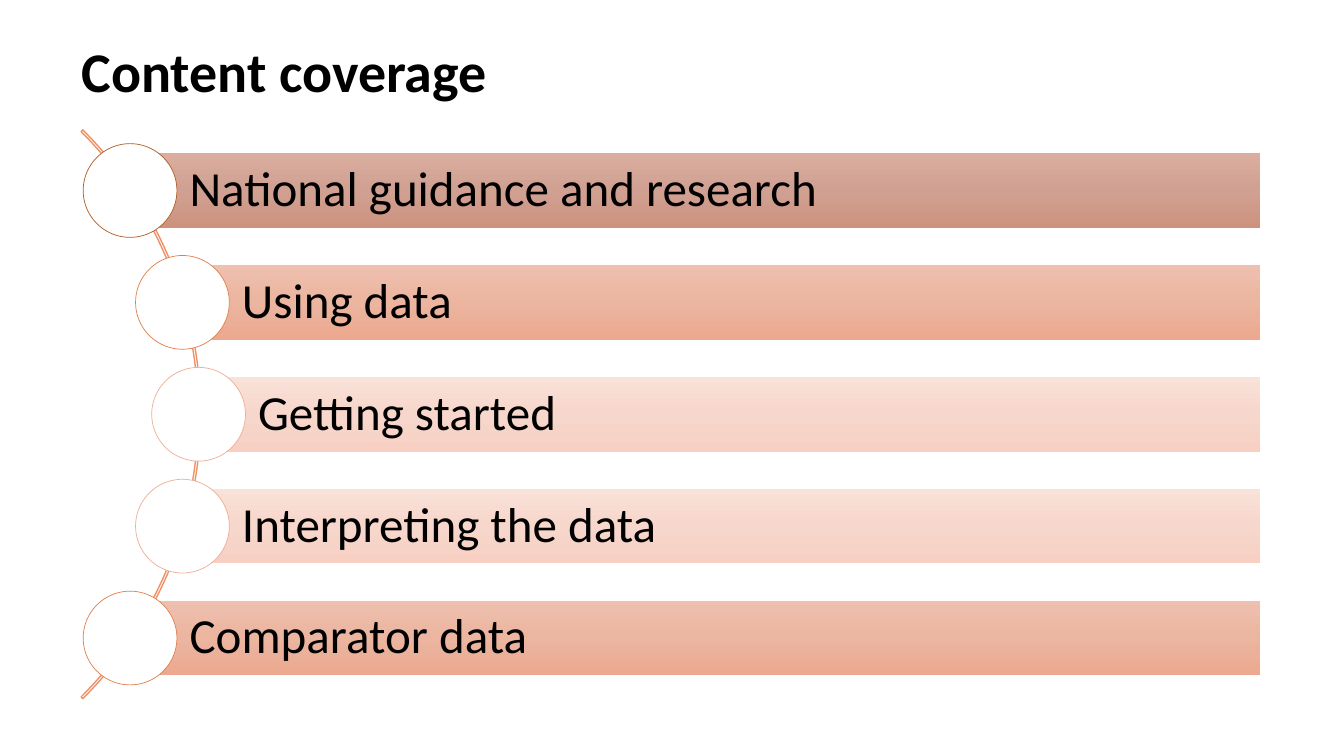
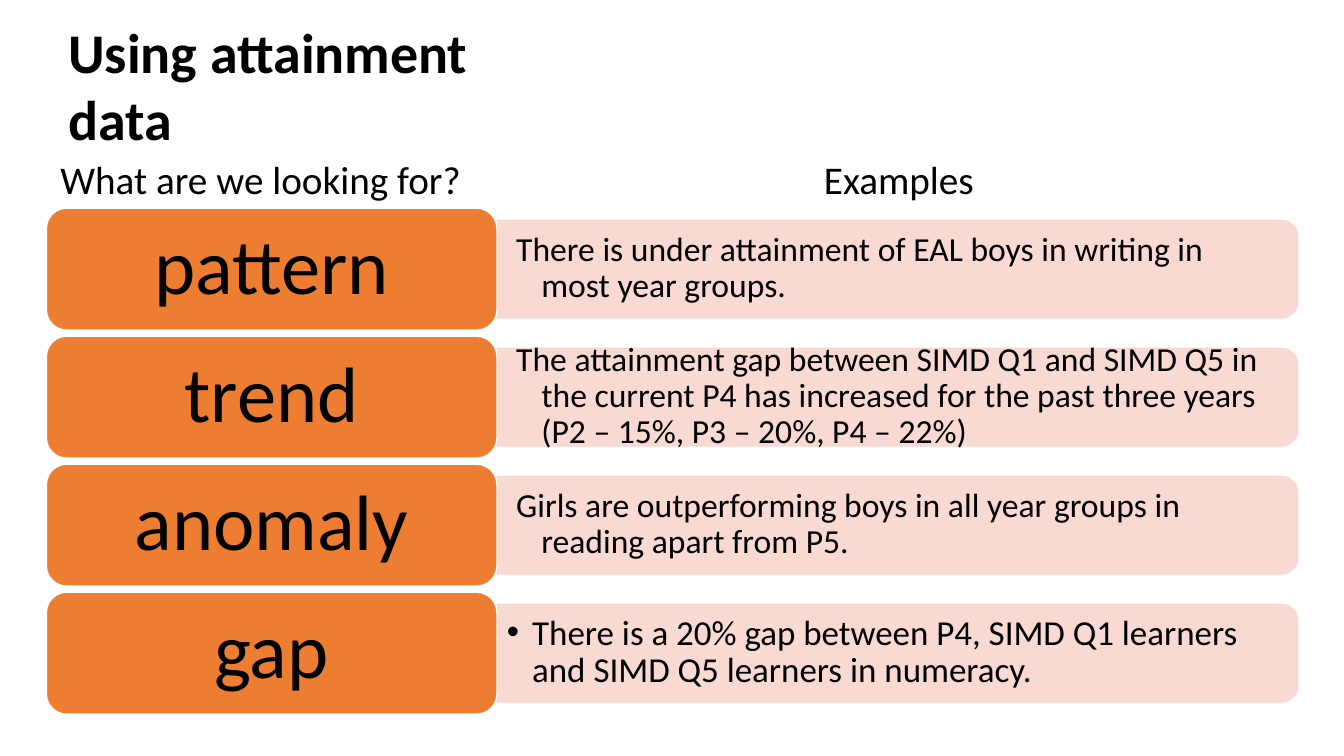
import copy
from dataclasses import dataclass

import pptx
import pptx.dml.color
import pptx.enum.shapes
import pptx.enum.text
import pptx.oxml.ns
import pptx.util
from lxml import etree

SHAPE = pptx.enum.shapes.MSO_SHAPE
ALIGN = pptx.enum.text.PP_ALIGN
ANCHOR = pptx.enum.text.MSO_ANCHOR
EMU_PER_PX = 9144
qn = pptx.oxml.ns.qn


@dataclass(frozen=True)
class Theme:
    font: str = "Calibri"
    ink: str = "000000"
    paper: str = "FFFFFF"
    arc: str = "EF9166"
    label: str = "ED7D31"
    example: str = "F8D7CE"
    dark: tuple = ("DAAD9F", "D0A192", "CD927E", "AF5C24")
    medium: tuple = ("EFC0AF", "EBB5A0", "ECA98F", "DF7F4D")
    light: tuple = ("F9E2D9", "F7D6CB", "F7D0C3", "EEAE95")
    title_size: int = 40
    heading_size: int = 28
    topic_size: int = 35
    label_size: int = 56
    example_size: int = 24
    bullet_size: int = 25


THEME = Theme()

TOPICS = [
    ("National guidance and research", THEME.dark),
    ("Using data", THEME.medium),
    ("Getting started", THEME.light),
    ("Interpreting the data", THEME.light),
    ("Comparator data", THEME.medium),
]

FINDINGS = [
    ("pattern", "There is under attainment of EAL boys in writing in most year groups.", False),
    ("trend", "The attainment gap between SIMD Q1 and SIMD Q5 in the current P4 has increased "
              "for the past three years (P2 – 15%, P3 – 20%, P4 – 22%)", False),
    ("anomaly", "Girls are outperforming boys in all year groups in reading apart from P5.", False),
    ("gap", "There is a 20% gap between P4, SIMD Q1 learners and SIMD Q5 learners in numeracy.", True),
]


def px(value):
    return pptx.util.Emu(round(value * EMU_PER_PX))


def rgb(code):
    return pptx.dml.color.RGBColor.from_string(code)


def write(holder, text, size, bold=False, align=ALIGN.LEFT, anchor=ANCHOR.MIDDLE,
          insets=(10, 5, 10, 5), spacing=None):
    frame = holder.text_frame
    frame.word_wrap = True
    frame.vertical_anchor = anchor
    frame.margin_left, frame.margin_top, frame.margin_right, frame.margin_bottom = map(px, insets)
    paragraph = frame.paragraphs[0]
    paragraph.text = text
    paragraph.alignment = align
    paragraph.line_spacing = spacing
    paragraph.font.name = THEME.font
    paragraph.font.size = pptx.util.Pt(size)
    paragraph.font.bold = bold
    paragraph.font.color.rgb = rgb(THEME.ink)
    return paragraph


def add_text(slide, box, text, size, **style):
    return write(slide.shapes.add_textbox(*map(px, box)), text, size, **style)


def add_title(slide, box, text, anchor):
    add_text(slide, box, text, THEME.title_size, bold=True, anchor=anchor)


def add_shape(slide, preset, box, fill=None, line=None, width=1):
    shape = slide.shapes.add_shape(preset, *map(px, box))
    shape.shadow.inherit = False
    if fill:
        shape.fill.solid()
        shape.fill.fore_color.rgb = rgb(fill)
    else:
        shape.fill.background()
    if line:
        shape.line.color.rgb = rgb(line)
        shape.line.width = pptx.util.Pt(width)
    else:
        shape.line.fill.background()
    return shape


def shade_downwards(shape, colours):
    shape.fill.gradient()
    shape.fill.gradient_angle = 270
    stop_list = shape.element.spPr.find(qn("a:gradFill")).find(qn("a:gsLst"))
    stop_list.append(copy.deepcopy(stop_list[-1]))
    for index, (stop, colour) in enumerate(zip(shape.fill.gradient_stops, colours)):
        stop.color.rgb = rgb(colour)
        stop.position = index / (len(colours) - 1)


def make_translucent(shape, percent):
    for colour in shape.element.spPr.iter(qn("a:srgbClr")):
        etree.SubElement(colour, qn("a:alpha")).set("val", str(percent * 1000))


def hang(paragraph, indent, bullet):
    properties = paragraph._p.get_or_add_pPr()
    properties.set("marL", str(px(indent)))
    properties.set("indent", str(px(-indent)))
    if bullet:
        etree.SubElement(properties, qn("a:buFont")).set("typeface", "Arial")
        etree.SubElement(properties, qn("a:buChar")).set("char", "•")
        defaults = properties.find(qn("a:defRPr"))
        if defaults is not None:
            properties.append(defaults)


def add_arc(slide, centre_x, centre_y, radius):
    arc = add_shape(slide, SHAPE.BLOCK_ARC,
                    (centre_x - radius, centre_y - radius, 2 * radius, 2 * radius), line=THEME.arc)
    for index, value in enumerate((189, 27, 0.003)):
        arc.adjustments[index] = value


def add_topic(slide, left, middle, text, palette):
    right, height, diameter = 1250, 74, 93
    *shades, outline = palette
    bar = add_shape(slide, SHAPE.RECTANGLE, (left, middle - height / 2, right - left, height))
    shade_downwards(bar, shades)
    write(bar, text, THEME.topic_size, insets=(59, 10, 10, 10), spacing=0.9)
    add_shape(slide, SHAPE.OVAL, (left - diameter / 2, middle - diameter / 2, diameter, diameter),
              THEME.paper, outline, 0.5)


def add_example(slide, left, middle, text, bullet):
    width, height = 794, 97
    panel = add_shape(slide, SHAPE.ROUND_2_SAME_RECTANGLE,
                      (left + (width - height) / 2, middle - width / 2, height, width),
                      THEME.example, THEME.example)
    panel.rotation = 90
    make_translucent(panel, 90)
    size = THEME.bullet_size if bullet else THEME.example_size
    insets = (10, 5, 10, 5) if bullet else (19, 9, 19, 9)
    example = add_text(slide, (left, middle - 44, 790, 87), text, size, insets=insets, spacing=0.9)
    hang(example, 25, bullet)


def add_finding(slide, middle, label, example, bullet):
    left, width, height = 46, 447, 121
    add_example(slide, left + width, middle, example, bullet)
    name = add_shape(slide, SHAPE.ROUNDED_RECTANGLE, (left, middle - height / 2, width, height),
                     THEME.label, THEME.paper)
    write(name, label, THEME.label_size, align=ALIGN.CENTER, insets=(29, 18, 29, 18), spacing=0.9)


def build_coverage(slide):
    add_title(slide, (71, 43, 580, 54), "Content coverage", ANCHOR.MIDDLE)
    centre_x, centre_y, pitch, reach = -200, 411, 111, 397
    add_arc(slide, centre_x, centre_y, 399)
    for index, (text, palette) in enumerate(TOPICS):
        offset = (index - len(TOPICS) // 2) * pitch
        left = centre_x + round((reach ** 2 - offset ** 2) ** 0.5)
        add_topic(slide, left, centre_y + offset, text, palette)


def build_attainment(slide):
    add_title(slide, (58, 12, 508, 77), "Using attainment data", ANCHOR.TOP)
    for index, (label, example, bullet) in enumerate(FINDINGS):
        add_finding(slide, 267 + 127 * index, label, example, bullet)
    for left, heading, align in ((50, "What are we looking for?", ALIGN.LEFT),
                                 (679, "Examples", ALIGN.CENTER)):
        add_text(slide, (left, 149, 425, 57), heading, THEME.heading_size,
                 align=align, anchor=ANCHOR.TOP)


def main():
    deck = pptx.Presentation()
    deck.slide_width, deck.slide_height = px(1333), px(750)
    for build in (build_coverage, build_attainment):
        build(deck.slides.add_slide(deck.slide_layouts[6]))
    deck.save("out.pptx")


if __name__ == "__main__":
    main()
